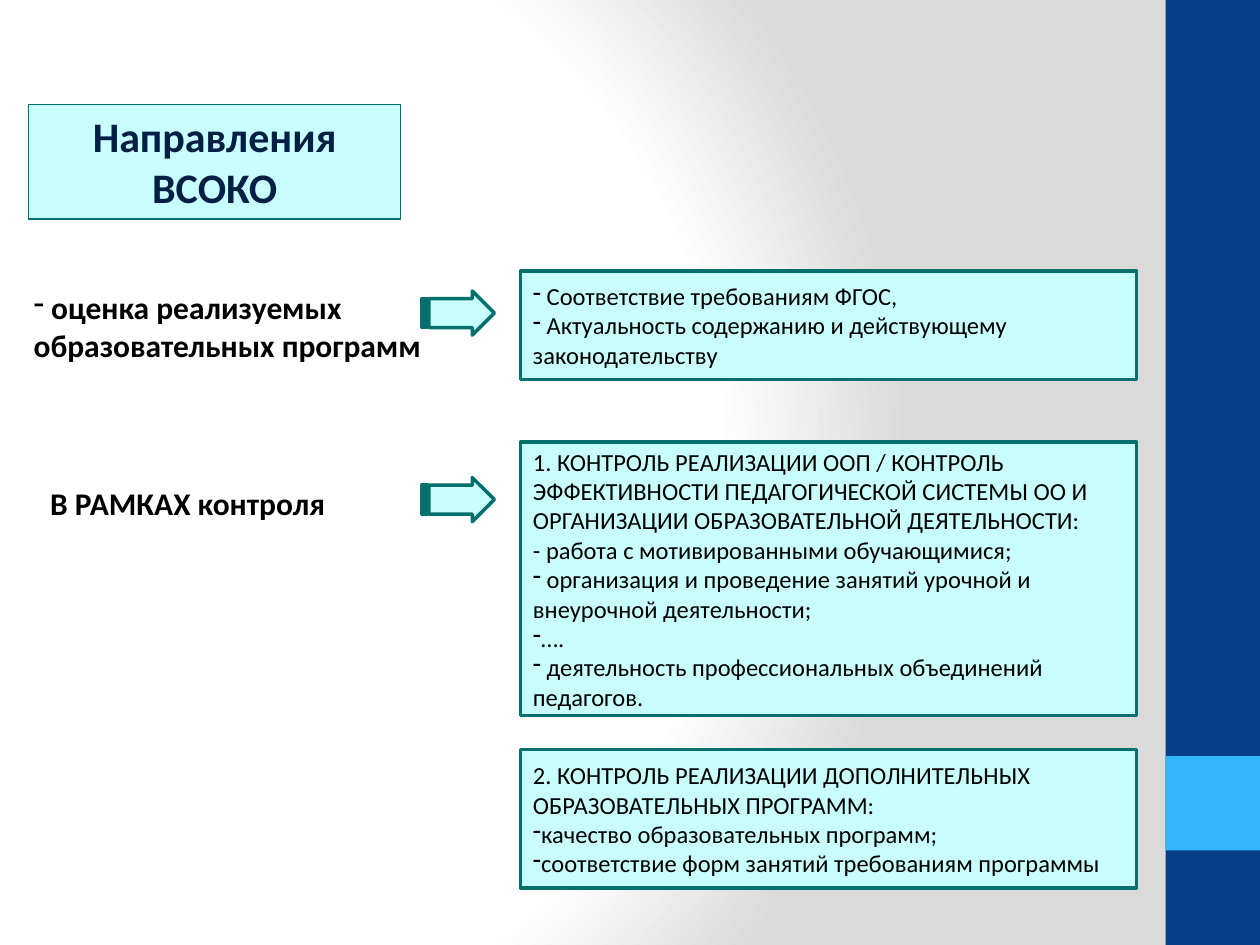
from lxml import etree
from pptx import Presentation
from pptx.dml.color import RGBColor
from pptx.enum import shapes, text
from pptx.oxml import ns, parse_xml
from pptx.util import Pt

FONT = "Calibri"
BLACK, NAVY, BLUE, SKY = "000000", "041F44", "073E87", "31B6FD"
PALE, TEAL = "C8FEFD", "03706E"
LABEL_WIDTH = 249
BOX_LEFT, BOX_WIDTH = 297.5, 352

# Each line: (bullet, wording)
BOXES = [
    (154.8, 62, [
        ("-", " Соответствие требованиям ФГОС,"),
        ("-", " Актуальность содержанию и действующему законодательству"),
    ]),
    (252.7, 156.2, [
        ("", "1. КОНТРОЛЬ РЕАЛИЗАЦИИ ООП / КОНТРОЛЬ ЭФФЕКТИВНОСТИ ПЕДАГОГИЧЕСКОЙ "
             "СИСТЕМЫ ОО И ОРГАНИЗАЦИИ ОБРАЗОВАТЕЛЬНОЙ ДЕЯТЕЛЬНОСТИ:"),
        ("", "- работа с мотивированными обучающимися;"),
        ("-", " организация и проведение занятий урочной и внеурочной деятельности;"),
        ("-", "…."),
        ("-", " деятельность профессиональных объединений педагогов."),
    ]),
    (428.4, 79.2, [
        ("", "2. КОНТРОЛЬ РЕАЛИЗАЦИИ ДОПОЛНИТЕЛЬНЫХ ОБРАЗОВАТЕЛЬНЫХ ПРОГРАММ:"),
        ("-", "качество образовательных программ;"),
        ("-", "соответствие форм занятий требованиям программы"),
    ]),
]
LABELS = [
    (12.2, 161.3, 51, [("-", " оценка реализуемых образовательных программ")]),
    (21.6, 272.9, 29, [("", "В РАМКАХ контроля")]),
]
ARROW_TOPS = (166.3, 272.9)


def color(value):
    return RGBColor.from_string(value)


def set_background(slide):
    """Fill the slide with a radial gradient from white to grey."""
    slide.background.fill.solid()
    solid = slide.background._cSld.bg.bgPr.find(ns.qn("a:solidFill"))
    stops = "".join(
        f'<a:gs pos="{position * 1000}"><a:srgbClr val="{value}"/></a:gs>'
        for position, value in ((0, "FFFFFF"), (75, "FFFFFF"), (100, "DADADA")))
    gradient = parse_xml(
        f'<a:gradFill {ns.nsdecls("a")} rotWithShape="1"><a:gsLst>{stops}</a:gsLst>'
        '<a:path path="circle"><a:fillToRect l="20000" t="50000" r="100000" '
        'b="50000"/></a:path></a:gradFill>')
    solid.getparent().replace(solid, gradient)


def paint(shape, fill, line=None, width=2):
    shape.fill.solid()
    shape.fill.fore_color.rgb = color(fill)
    if line:
        shape.line.color.rgb = color(line)
        shape.line.width = Pt(width)
    else:
        shape.line.fill.background()


def add_shape(slide, kind, left, top, width, height, fill, line=None):
    shape = slide.shapes.add_shape(kind, Pt(left), Pt(top), Pt(width), Pt(height))
    shape.shadow.inherit = False
    paint(shape, fill, line)
    return shape


def set_bullet(paragraph, character):
    properties = paragraph._p.get_or_add_pPr()
    properties.set("marL", "0")
    properties.set("indent", "0")
    etree.SubElement(properties, ns.qn("a:buFontTx"))
    etree.SubElement(properties, ns.qn("a:buChar")).set("char", character)


def write_lines(shape, lines, size, font_color=BLACK, bold=False,
                align=text.PP_ALIGN.LEFT, anchor=text.MSO_ANCHOR.TOP):
    frame = shape.text_frame
    frame.word_wrap = True
    frame.auto_size = text.MSO_AUTO_SIZE.NONE
    frame.vertical_anchor = anchor
    for index, (bullet, wording) in enumerate(lines):
        paragraph = frame.add_paragraph() if index else frame.paragraphs[0]
        paragraph.alignment = align
        if bullet:
            set_bullet(paragraph, bullet)
        run = paragraph.add_run()
        run.text = wording
        run.font.name = FONT
        run.font.size = Pt(size)
        run.font.bold = bold
        run.font.color.rgb = color(font_color)


def add_title(slide):
    title = slide.shapes.title
    title.left, title.top, title.width, title.height = Pt(16.4), Pt(59.7), Pt(212.6), Pt(65.5)
    paint(title, PALE, TEAL, 0.75)
    write_lines(title, [("", "Направления ВСОКО")], 24, NAVY, True, text.PP_ALIGN.CENTER)


def add_label(slide, left, top, height, lines):
    label = slide.shapes.add_textbox(Pt(left), Pt(top), Pt(LABEL_WIDTH), Pt(height))
    write_lines(label, lines, 18, bold=True)


def add_arrow(slide, top):
    arrow = add_shape(slide, shapes.MSO_SHAPE.STRIPED_RIGHT_ARROW,
                      241.2, top, 41.3, 25.2, PALE, TEAL)
    arrow.adjustments[0] = 0.66
    arrow.adjustments[1] = 0.5


def add_box(slide, top, height, lines):
    box = add_shape(slide, shapes.MSO_SHAPE.RECTANGLE,
                    BOX_LEFT, top, BOX_WIDTH, height, PALE, TEAL)
    write_lines(box, lines, 14, anchor=text.MSO_ANCHOR.MIDDLE)


def main():
    presentation = Presentation()
    presentation.slide_width, presentation.slide_height = Pt(720), Pt(540)
    slide = presentation.slides.add_slide(presentation.slide_layouts[5])
    set_background(slide)
    for top, height, fill in ((0, 540, BLUE), (432, 54, SKY)):
        add_shape(slide, shapes.MSO_SHAPE.RECTANGLE, 666, top, 54, height, fill)
    add_title(slide)
    for label in LABELS:
        add_label(slide, *label)
    for top in ARROW_TOPS:
        add_arrow(slide, top)
    for box in BOXES:
        add_box(slide, *box)
    presentation.save("out.pptx")


if __name__ == "__main__":
    main()
